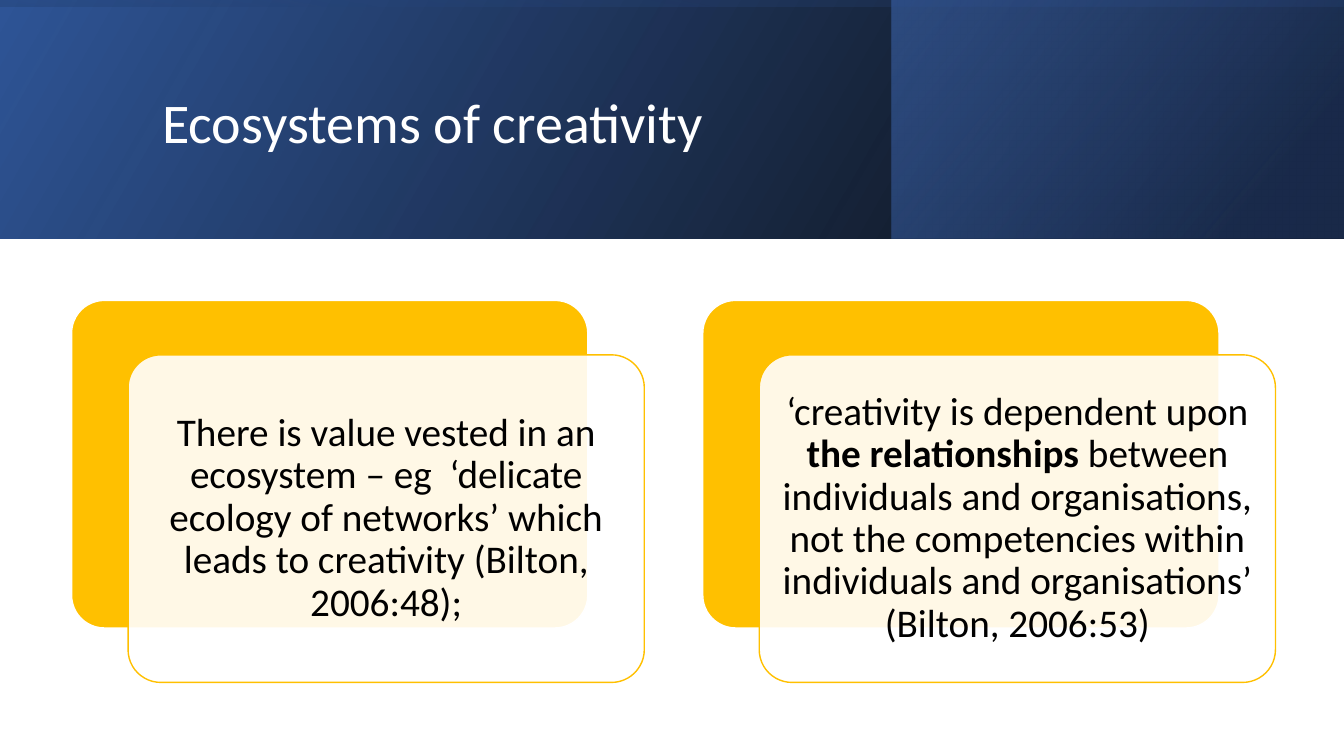
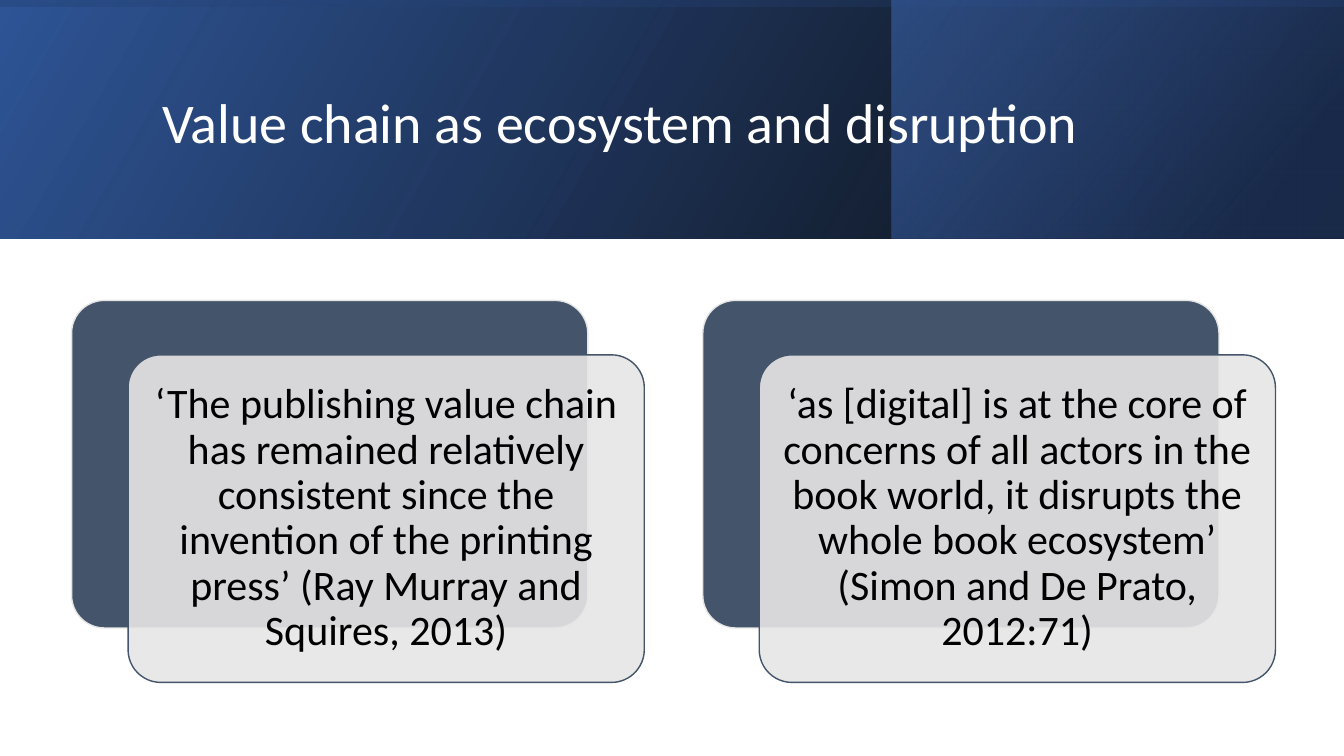
from lxml import etree
from pptx import Presentation
from pptx.dml.color import RGBColor
from pptx.enum.shapes import MSO_SHAPE
from pptx.enum.text import MSO_ANCHOR, PP_ALIGN
from pptx.oxml.ns import qn
from pptx.util import Inches, Pt

RECTANGLE, ROUNDED = MSO_SHAPE.RECTANGLE, MSO_SHAPE.ROUNDED_RECTANGLE
MIDDLE = MSO_ANCHOR.MIDDLE
LEFT, CENTER = PP_ALIGN.LEFT, PP_ALIGN.CENTER

SLIDES = [
    {
        "title": "Ecosystems of creativity",
        "strong": "FFC000", "pale": "FFFFFF", "size": 28,
        "quotes": [
            [("There is value vested in an ecosystem – eg  ‘delicate ecology of networks’ "
              "which leads to creativity (Bilton, 2006:48);", False)],
            [("‘creativity is dependent upon ", False),
             ("the relationships ", True),
             ("between individuals and organisations, not the competencies within "
              "individuals and organisations’ (Bilton, 2006:53)", False)],
        ],
    },
    {
        "title": "Value chain as ecosystem and disruption",
        "strong": "44546A", "pale": "E7E6E6", "size": 30,
        "quotes": [
            [("‘The publishing value chain has remained relatively consistent since the "
              "invention of the printing press’ (Ray Murray and Squires, 2013)", False)],
            [("‘as [digital] is at the core of concerns of all actors in the book world, "
              "it disrupts the whole book ecosystem’ (Simon and De Prato, 2012:71)", False)],
        ],
    },
]

FONT, WHITE, BLACK = "Calibri", "FFFFFF", "000000"
SLIDE_W, SLIDE_H, BAND_H = 13.33, 7.5, 2.37
ACCENT_X, ACCENT_W = 8.84, 4.49
BAND_LAYERS = [
    {"box": (0, 0, SLIDE_W, BAND_H), "rotation": 0, "angle": 330,
     "stops": [(0, "000000", 96), (100, "2F5597", 100)]},
    {"box": (ACCENT_X, 0, ACCENT_W, BAND_H), "rotation": 0, "angle": 320,
     "stops": [(19, "203864", 68), (100, "4472C4", 48)]},
    {"box": ((SLIDE_W - BAND_H) / 2, (BAND_H - SLIDE_W) / 2, BAND_H, SLIDE_W),
     "rotation": 270, "angle": 350,
     "stops": [(23, "2F5597", 16), (99, "000000", 45)]},
]
TITLE_BOX = (1.51, 0.38, 10.63, 1.72)
CARD_X, CARD_Y, CARD_W, CARD_H = 0.71, 2.98, 5.12, 3.25
CARD_PITCH, FRONT_DX, FRONT_DY = 6.26, 0.56, 0.54


def color(value):
    return RGBColor.from_string(value)


def add_alpha(color_node, percent):
    etree.SubElement(color_node, qn("a:alpha"), val=str(percent * 1000))


def add_box(slide, kind, box):
    shape = slide.shapes.add_shape(kind, *map(Inches, box))
    shape.shadow.inherit = False
    return shape


def add_band_layer(slide, box, rotation, angle, stops):
    layer = add_box(slide, RECTANGLE, box)
    layer.line.fill.background()
    layer.rotation = rotation
    properties = layer._element.spPr
    properties.find(qn("a:xfrm")).set("flipH", "1")
    gradient = etree.Element(qn("a:gradFill"), rotWithShape="1")
    stop_list = etree.SubElement(gradient, qn("a:gsLst"))
    for position, value, opacity in stops:
        stop = etree.SubElement(stop_list, qn("a:gs"), pos=str(position * 1000))
        add_alpha(etree.SubElement(stop, qn("a:srgbClr"), val=value), opacity)
    etree.SubElement(gradient, qn("a:lin"), ang=str(angle * 60000), scaled="0")
    properties.find(qn("a:prstGeom")).addnext(gradient)


def add_card(slide, left, top, fill, line, opacity=100):
    card = add_box(slide, ROUNDED, (left, top, CARD_W, CARD_H))
    card.adjustments[0] = 0.1
    card.fill.solid()
    card.fill.fore_color.rgb = color(fill)
    if opacity < 100:
        add_alpha(card._element.spPr.find(qn("a:solidFill"))[0], opacity)
    card.line.color.rgb = color(line)
    card.line.width = Pt(1)
    return card


def write_text(shape, runs, size, ink, align=LEFT, inset=(0.1, 0.05)):
    frame = shape.text_frame
    frame.word_wrap = True
    frame.vertical_anchor = MIDDLE
    frame.margin_left = frame.margin_right = Inches(inset[0])
    frame.margin_top = frame.margin_bottom = Inches(inset[1])
    paragraph = frame.paragraphs[0]
    paragraph.alignment = align
    paragraph.line_spacing = 0.9
    for text, bold in runs:
        run = paragraph.add_run()
        run.text = text
        run.font.name = FONT
        run.font.size = Pt(size)
        run.font.bold = bold
        run.font.color.rgb = color(ink)


def add_quote_slide(deck, content):
    slide = deck.slides.add_slide(deck.slide_layouts[6])
    for layer in BAND_LAYERS:
        add_band_layer(slide, **layer)
    title = slide.shapes.add_textbox(*map(Inches, TITLE_BOX))
    write_text(title, [(content["title"], False)], size=40, ink=WHITE)
    strong, pale = content["strong"], content["pale"]
    for index, quote in enumerate(content["quotes"]):
        left = CARD_X + index * CARD_PITCH
        add_card(slide, left, CARD_Y, fill=strong, line=pale)
        front = add_card(slide, left + FRONT_DX, CARD_Y + FRONT_DY,
                         fill=pale, line=strong, opacity=90)
        write_text(front, quote, size=content["size"], ink=BLACK,
                   align=CENTER, inset=(0.12, 0.12))


def main():
    """Build the two quotation slides and save the deck."""
    deck = Presentation()
    deck.slide_width, deck.slide_height = Inches(SLIDE_W), Inches(SLIDE_H)
    for content in SLIDES:
        add_quote_slide(deck, content)
    deck.save("out.pptx")


if __name__ == "__main__":
    main()
